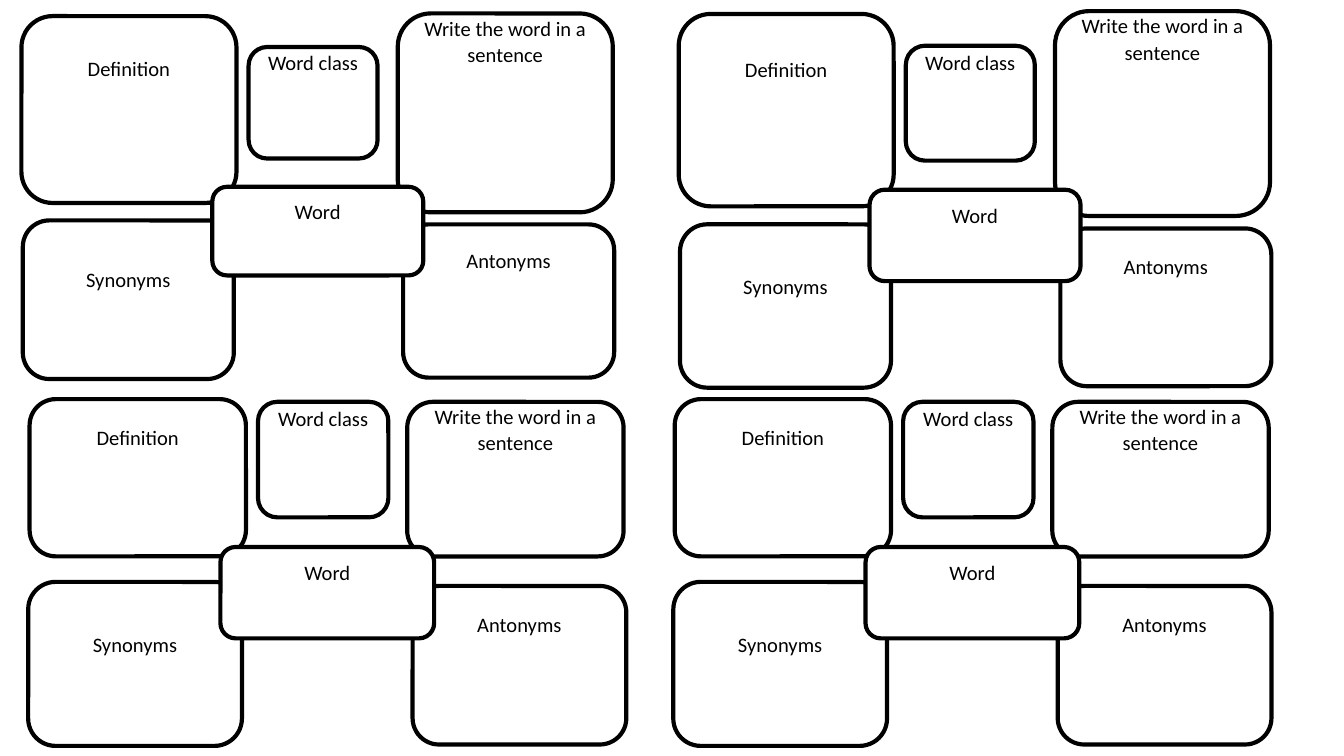
from pptx import Presentation
from pptx.dml.color import RGBColor
from pptx.enum.shapes import MSO_SHAPE as SHAPE
from pptx.enum.text import MSO_ANCHOR as ANCHOR, PP_ALIGN as ALIGN
from pptx.util import Inches, Pt


def color(value):
    return RGBColor.from_string(value)


def write(s, text, size=11, font="Calibri", fill="000000", bottom=0):
    tf = s.text_frame
    tf.word_wrap = True
    tf.vertical_anchor = ANCHOR.MIDDLE
    tf.margin_top = 0
    tf.margin_bottom = Inches(bottom)
    p = tf.paragraphs[0]
    p.alignment = ALIGN.CENTER
    p.line_spacing = 1.07
    r = p.add_run()
    r.text = text
    r.font.size = Pt(size)
    r.font.name = font
    r.font.color.rgb = color(fill)


prs = Presentation()
prs.slide_width = Inches(10)
prs.slide_height = prs.slide_width * 9 // 16
slide = prs.slides.add_slide(prs.slide_layouts[6])

labels = [
    ("Antonyms", 0.62),
    ("Definition", 0.62),
    ("Synonyms", 0.31),
    ("Write the word in a sentence", None),
    ("Word", 0.31),
    ("Word class", 0.62),
]
upper = [
    (3, 1.67, 1.57, 1.14),
    (0.16, 0.12, 1.6, 1.39),
    (0.17, 1.64, 1.57, 1.18),
    (2.96, 0.1, 1.6, 1.48),
    (1.58, 1.39, 1.57, 0.66),
    (1.85, 0.35, 0.96, 0.83),
]
lower = [
    (3.07, 4.36, 1.59, 1.18),
    (0.22, 2.97, 1.61, 1.17),
    (0.21, 4.33, 1.59, 1.22),
    (3.03, 2.99, 1.61, 1.15),
    (1.64, 4.07, 1.59, 0.68),
    (1.92, 2.99, 0.97, 0.86),
]
organizers = [
    (upper, 0, 0, 1),
    (lower, 0, 0, 1),
    (upper, 4.89, -0.02, 1.03),
    (lower, 4.8, 0, 1),
]
two_lines = 0.4

for boxes, dx, dy, stretch in organizers:
    group = slide.shapes.add_group_shape()
    for (x, y, w, h), (text, bottom) in zip(boxes, labels):
        height = h * stretch
        s = group.shapes.add_shape(
            SHAPE.ROUNDED_RECTANGLE,
            Inches(x + dx), Inches(y * stretch + dy), Inches(w), Inches(height),
        )
        s.shadow.inherit = False
        s.fill.solid()
        s.fill.fore_color.rgb = color("FFFFFF")
        s.line.color.rgb = color("000000")
        s.line.width = Pt(2.25)
        write(s, text, bottom=height - two_lines if bottom is None else bottom)

prs.save("out.pptx")
